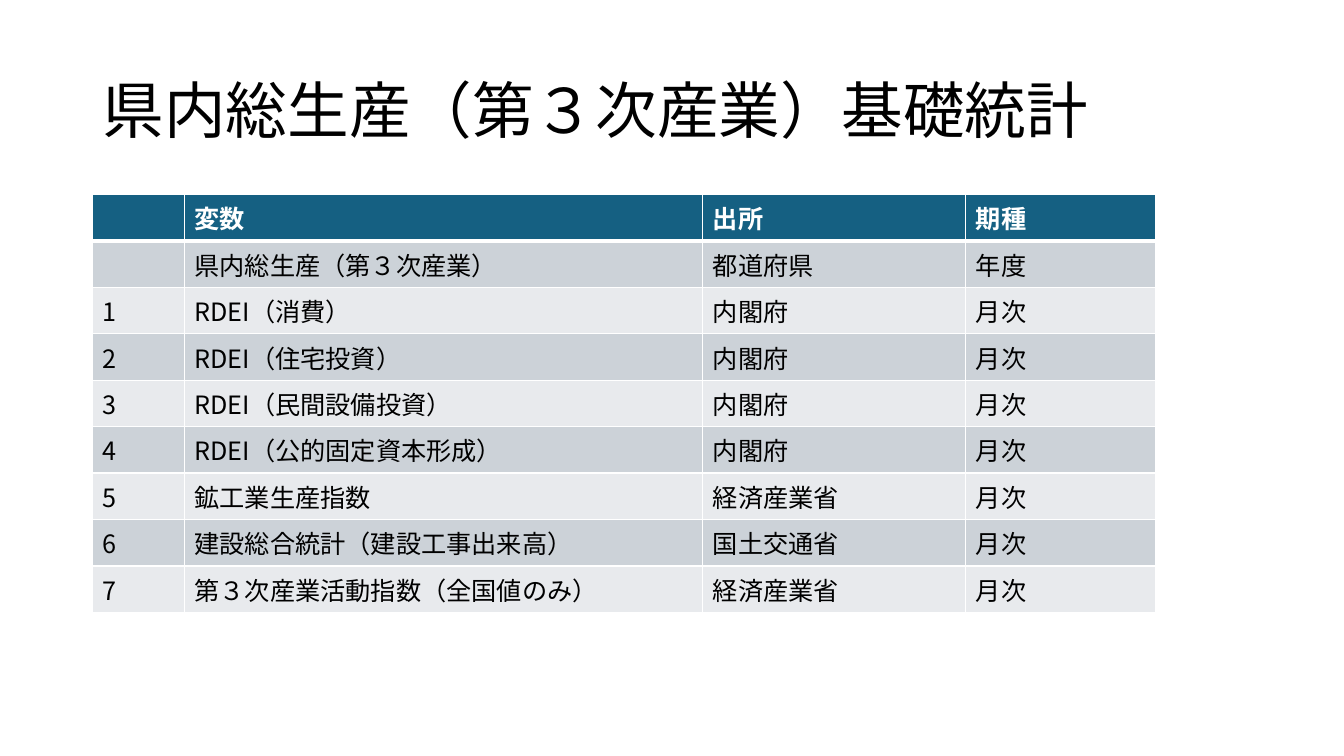
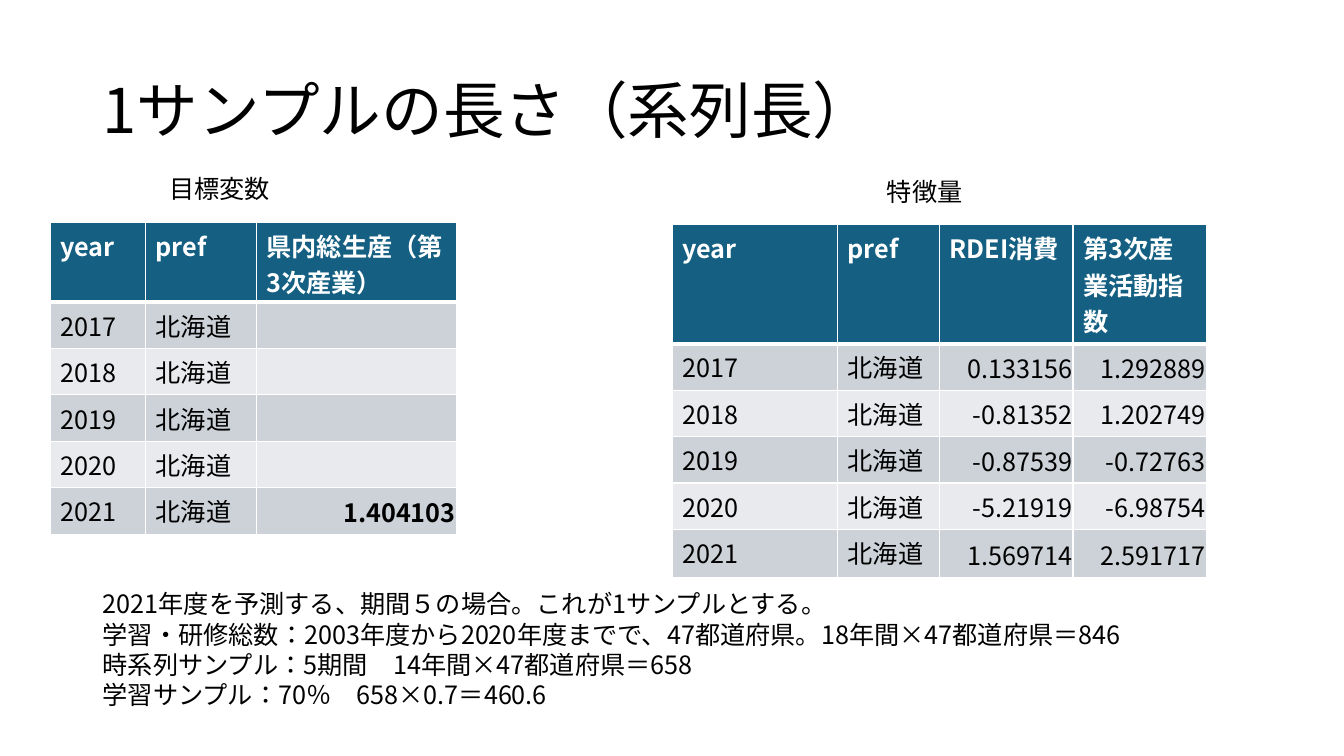
from dataclasses import dataclass
from lxml.etree import SubElement
from pptx import Presentation
from pptx.dml.color import RGBColor
from pptx.enum.lang import MSO_LANGUAGE_ID
from pptx.enum.text import MSO_ANCHOR, PP_ALIGN
from pptx.oxml.ns import qn
from pptx.util import Cm, Pt


@dataclass(frozen=True)
class Theme:
    font: str = "Noto Sans CJK JP"
    head: str = "156082"
    bands: tuple = ("CCD2D8", "E8EAED")
    ink: str = "000000"
    white: str = "FFFFFF"
    title: int = 44
    body: int = 18
    thin: int = 1
    thick: int = 3


THEME = Theme()
YEARS = ["2017", "2018", "2019", "2020", "2021"]
PREF = "北海道"
GOAL = ["", "", "", "", "1.404103"]
SPEND = ["0.133156", "-0.81352", "-0.87539", "-5.21919", "1.569714"]
INDEX = ["1.292889", "1.202749", "-0.72763", "-6.98754", "2.591717"]
MONTHLY = [
    ("RDEI（消費）", "内閣府"),
    ("RDEI（住宅投資）", "内閣府"),
    ("RDEI（民間設備投資）", "内閣府"),
    ("RDEI（公的固定資本形成）", "内閣府"),
    ("鉱工業生産指数", "経済産業省"),
    ("建設総合統計（建設工事出来高）", "国土交通省"),
    ("第３次産業活動指数（全国値のみ）", "経済産業省"),
]

SLIDES = [
    {
        "title": "県内総生産（第３次産業）基礎統計",
        "texts": [],
        "tables": [
            {
                "at": (2.34, 4.9),
                "cols": [2.31, 13.06, 6.63, 4.78],
                "heights": [1.17] * 9,
                "rows": [
                    ("", "変数", "出所", "期種"),
                    ("", "県内総生産（第３次産業）", "都道府県", "年度"),
                    *[(str(i), name, source, "月次")
                      for i, (name, source) in enumerate(MONTHLY, 1)],
                ],
            },
        ],
    },
    {
        "title": "1サンプルの長さ（系列長）",
        "texts": [
            ((4.01, 4.24, 4.72, 1.02), ["目標変数"]),
            ((22.1, 4.32, 4.06, 1.02), ["特徴量"]),
            ((2.34, 14.71, 29.21, 3.33), [
                "2021年度を予測する、期間５の場合。これが1サンプルとする。",
                "学習・研修総数：2003年度から2020年度までで、47都道府県。18年間×47都道府県＝846",
                "時系列サンプル：5期間　14年間×47都道府県＝658",
                "学習サンプル：70％　658×0.7＝460.6",
            ]),
        ],
        "tables": [
            {
                "at": (16.94, 5.66),
                "cols": [4.17, 2.57, 3.36, 3.36],
                "heights": [3] + [1.17] * 4 + [1.22],
                "rows": [
                    ("year", "pref", "RDEI消費", "第3次産業活動指数"),
                    *[(year, PREF, spend, index)
                      for year, spend, index in zip(YEARS, SPEND, INDEX)],
                ],
            },
            {
                "at": (1.27, 5.6),
                "cols": [2.4, 2.79, 5.04],
                "heights": [2.01] + [1.17] * 5,
                "strong": True,
                "rows": [
                    ("year", "pref", "県内総生産（第3次産業）"),
                    *[(year, PREF, goal) for year, goal in zip(YEARS, GOAL)],
                ],
            },
        ],
    },
]

TITLE_BOX = (2.34, 1.02, 29.21, 3.68)
NUMBER = {
    "vertical_anchor": MSO_ANCHOR.MIDDLE,
    "margin_left": Cm(0.02),
    "margin_right": Cm(0.02),
    "margin_top": Cm(0.02),
    "margin_bottom": Cm(0),
}


def assign(target, values):
    for name, value in values.items():
        setattr(target, name, value)


def write(part, text, size, color=THEME.ink, bold=False):
    run = part.add_run()
    run.text = text
    assign(run.font, {
        "name": THEME.font,
        "size": Pt(size),
        "bold": bold,
        "language_id": MSO_LANGUAGE_ID.JAPANESE,
    })
    run.font.color.rgb = RGBColor.from_string(color)
    SubElement(run.font._element, qn("a:ea"), typeface=THEME.font)


def add_text(slide, box, lines, size=THEME.body, anchor=MSO_ANCHOR.TOP, space=None):
    frame = slide.shapes.add_textbox(*map(Cm, box)).text_frame
    assign(frame, {"word_wrap": True, "vertical_anchor": anchor})
    for i, line in enumerate(lines):
        part = frame.add_paragraph() if i else frame.paragraphs[0]
        part.line_spacing = space
        write(part, line, size)


def add_edges(cell, row):
    props = cell._tc.get_or_add_tcPr()
    heavy = {0: "B", 1: "T"}.get(row)
    for i, side in enumerate("LRTB"):
        width = THEME.thick if side == heavy else THEME.thin
        line = SubElement(props, qn(f"a:ln{side}"), w=str(Pt(width)))
        fill = SubElement(line, qn("a:solidFill"))
        SubElement(fill, qn("a:srgbClr"), val=THEME.white)
        props.insert(i, line)


def fill_cell(cell, text, row, strong):
    head = row == 0
    number = "." in text
    cell.fill.solid()
    shade = THEME.head if head else THEME.bands[(row - 1) % 2]
    cell.fill.fore_color.rgb = RGBColor.from_string(shade)
    add_edges(cell, row)
    part = cell.text_frame.paragraphs[0]
    if number:
        assign(cell, NUMBER)
        part.alignment = PP_ALIGN.RIGHT
    if text:
        color = THEME.white if head else THEME.ink
        write(part, text, THEME.body, color, head or (number and strong))


def add_grid(slide, data):
    rows, cols, heights = data["rows"], data["cols"], data["heights"]
    size = (sum(cols), sum(heights))
    table = slide.shapes.add_table(
        len(rows), len(cols), *map(Cm, data["at"] + size)).table
    for col, width in zip(table.columns, cols):
        col.width = Cm(width)
    for row, height in zip(table.rows, heights):
        row.height = Cm(height)
    for r, row in enumerate(rows):
        for c, text in enumerate(row):
            fill_cell(table.cell(r, c), text, r, data.get("strong", False))


def main():
    deck = Presentation()
    assign(deck, {"slide_width": Cm(33.87), "slide_height": Cm(19.05)})
    for page in SLIDES:
        slide = deck.slides.add_slide(deck.slide_layouts[6])
        add_text(slide, TITLE_BOX, [page["title"]], THEME.title,
                 MSO_ANCHOR.MIDDLE, 0.9)
        for data in page["tables"]:
            add_grid(slide, data)
        for box, lines in page["texts"]:
            add_text(slide, box, lines)
    deck.save("out.pptx")


if __name__ == "__main__":
    main()
